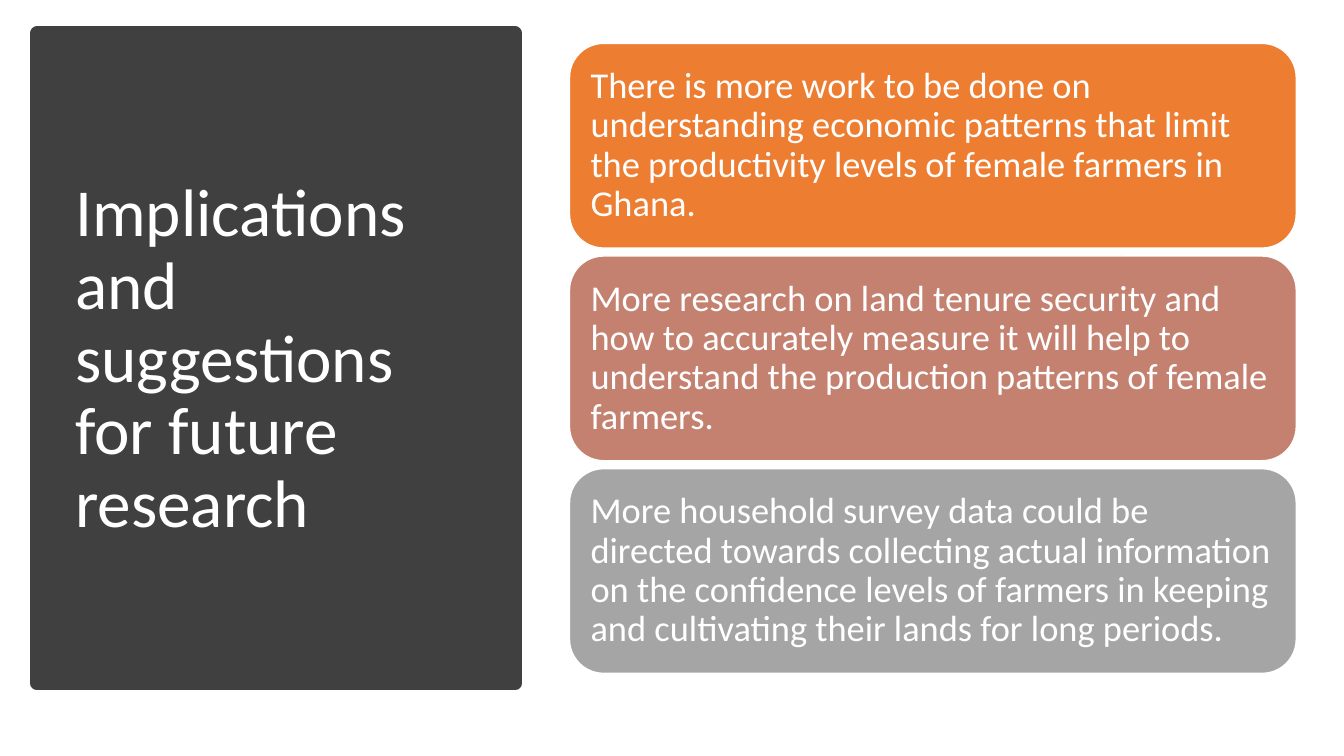
"""Build a slide with a title panel and three stacked suggestion cards."""
import enum

import pptx
import pptx.dml.color
import pptx.enum.shapes
import pptx.enum.text
import pptx.util

Pt = pptx.util.Pt


class Theme(enum.Enum):
    FONT = "Calibri"
    PANEL = "404040"
    WHITE = "FFFFFF"
    CARDS = ("ED7D31", "C48170", "A5A5A5")
    TITLE_SIZE = 48
    CARD_SIZE = 26


def add_box(slide, kind, bounds, fill, line, line_width):
    shape = slide.shapes.add_shape(kind, *[Pt(length) for length in bounds])
    shape.shadow.inherit = False
    shape.fill.solid()
    shape.fill.fore_color.rgb = pptx.dml.color.RGBColor.from_string(fill)
    shape.line.color.rgb = pptx.dml.color.RGBColor.from_string(line)
    shape.line.width = Pt(line_width)
    return shape


def write_text(shape, text, size, inset):
    frame = shape.text_frame
    frame.word_wrap = True
    frame.vertical_anchor = pptx.enum.text.MSO_ANCHOR.MIDDLE
    frame.margin_left = frame.margin_right = Pt(inset[0])
    frame.margin_top = frame.margin_bottom = Pt(inset[1])
    frame.text = text
    paragraph = frame.paragraphs[0]
    paragraph.alignment = pptx.enum.text.PP_ALIGN.LEFT
    paragraph.line_spacing = 0.9
    font = paragraph.runs[0].font
    font.name = Theme.FONT.value
    font.size = Pt(size)
    font.color.rgb = pptx.dml.color.RGBColor.from_string(Theme.WHITE.value)


presentation = pptx.Presentation()
presentation.slide_width = Pt(960)
presentation.slide_height = Pt(540)
slide = presentation.slides.add_slide(presentation.slide_layouts[6])

rectangle = pptx.enum.shapes.MSO_SHAPE.RECTANGLE
rounded_rectangle = pptx.enum.shapes.MSO_SHAPE.ROUNDED_RECTANGLE

add_box(slide, rectangle, (26.6, 23.8, 341.3, 464.4),
        Theme.PANEL.value, Theme.PANEL.value, 10)
title = slide.shapes.add_textbox(Pt(46.8), Pt(50.4), Pt(299.5), Pt(414))
write_text(title, "Implications and suggestions for future research",
           Theme.TITLE_SIZE.value, (7.2, 3.6))

suggestions = [
    "There is more work to be done on understanding economic patterns that "
    "limit the productivity levels of female farmers in Ghana.",
    "More research on land tenure security and how to accurately measure it "
    "will help to understand the production patterns of female farmers.",
    "More household survey data could be directed towards collecting actual "
    "information on the confidence levels of farmers in keeping and "
    "cultivating their lands for long periods.",
]
card_top, card_height, card_gap = 31, 146.2, 5.7
for index, (suggestion, color) in enumerate(zip(suggestions, Theme.CARDS.value)):
    top = card_top + index * (card_height + card_gap)
    card = add_box(slide, rounded_rectangle, (406.8, top, 519.1, card_height),
                   color, Theme.WHITE.value, 1)
    write_text(card, suggestion, Theme.CARD_SIZE.value, (7.9, 7.9))

presentation.save("out.pptx")
